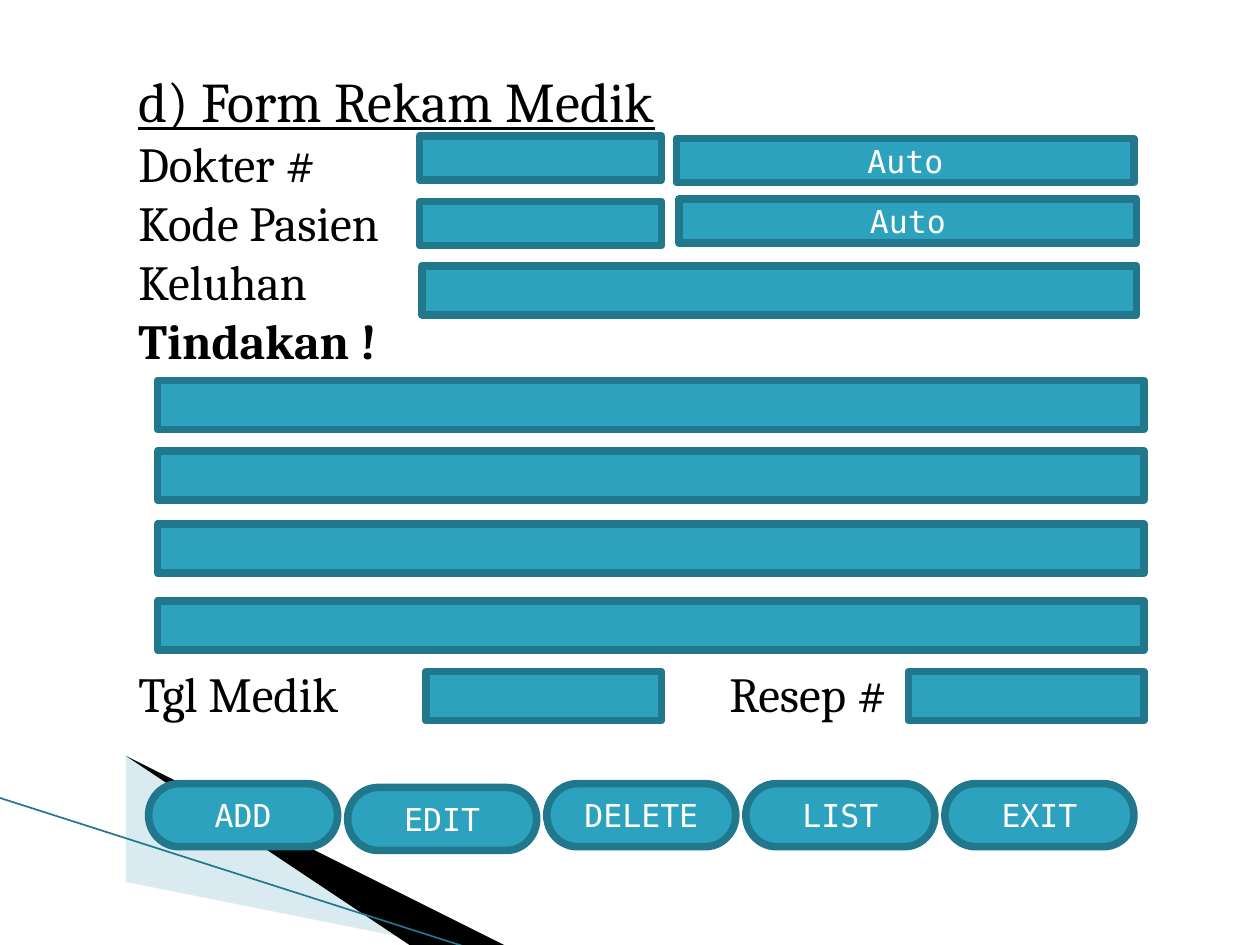
"""Build the medical record form slide."""
from lxml import etree
from pptx import Presentation
from pptx.dml.color import RGBColor
from pptx.enum import shapes, text
from pptx.oxml import ns
from pptx.util import Inches, Pt

BLACK = RGBColor(0, 0, 0)
WHITE = RGBColor(255, 255, 255)
TEAL = RGBColor(0x2D, 0xA2, 0xBF)
EDGE = RGBColor(0x21, 0x78, 0x8D)
PALE = RGBColor(0xA0, 0xCB, 0xDC)
RECT = shapes.MSO_SHAPE.RECTANGLE
PILL = shapes.MSO_SHAPE.FLOWCHART_TERMINATOR

WEDGES = [
    (PALE, 40, [(0.55, 6.51), (5.95, 7.51), (4.56, 7.51), (0.55, 6.5)]),
    (BLACK, 100, [(0.53, 6.49), (4.57, 7.51), (3.72, 7.52), (0.54, 6.5)]),
]
LABELS = [
    ("d) Form Rekam Medik", 32, False, True, 0),
    ("Dokter #", 28, False, False, 0),
    ("Kode Pasien", 28, False, False, 0),
    ("Keluhan", 28, False, False, 0),
    ("Tindakan !", 28, True, False, 0),
    ("Tgl Medik\tResep #", 28, False, False, 168),
]
RESEP_TAB = 4.69
FIELDS = [
    (3.33, 1.08, 1.92, 0.35, ""),
    (5.37, 1.1, 3.63, 0.35, "Auto"),
    (3.33, 1.6, 1.92, 0.35, ""),
    (5.39, 1.58, 3.63, 0.35, "Auto"),
    (3.35, 2.11, 5.67, 0.39, ""),
    (3.38, 5.33, 1.87, 0.39, ""),
    (7.21, 5.33, 1.87, 0.39, ""),
]
ACTION_TOPS = [3.02, 3.58, 4.16, 4.77]
BUTTONS = [("ADD", 6.22), ("EDIT", 6.25), ("DELETE", 6.22), ("LIST", 6.22), ("EXIT", 6.22)]
BUTTON_LEFT, BUTTON_STEP = 1.18, 1.58


def add_wedge(page, color, opacity, points):
    builder = page.shapes.build_freeform(*points[0], scale=Inches(1))
    builder.add_line_segments(points[1:])
    wedge = builder.convert_to_shape()
    wedge.shadow.inherit = False
    wedge.line.fill.background()
    wedge.fill.solid()
    wedge.fill.fore_color.rgb = color
    if opacity < 100:
        tint = wedge.fill._xPr.find(".//" + ns.qn("a:srgbClr"))
        etree.SubElement(tint, ns.qn("a:alpha"), val=str(opacity * 1000))


def add_edge_line(page):
    line = page.shapes.add_connector(
        shapes.MSO_CONNECTOR.STRAIGHT,
        Inches(-0.01), Inches(6.33), Inches(3.71), Inches(7.52))
    line.line.color.rgb = EDGE
    line.line.width = Pt(0.95)
    etree.SubElement(line._element.spPr, ns.qn("a:effectLst"))


def add_labels(page):
    box = page.shapes.add_textbox(Inches(1), Inches(0.48), Inches(8.5), Inches(6.43))
    frame = box.text_frame
    frame.word_wrap = True
    for index, (words, size, bold, underline, gap) in enumerate(LABELS):
        para = frame.paragraphs[0] if index == 0 else frame.add_paragraph()
        para.text = words
        if gap:
            para.space_before = Pt(gap)
        if "\t" in words:
            tabs = etree.SubElement(para._p.get_or_add_pPr(), ns.qn("a:tabLst"))
            etree.SubElement(tabs, ns.qn("a:tab"), pos=str(Inches(RESEP_TAB)), algn="l")
        font = para.font
        font.name, font.size = "Cambria", Pt(size)
        font.bold, font.underline = bold, underline
        font.color.rgb = BLACK


def add_control(page, kind, left, top, width, height, words=""):
    control = page.shapes.add_shape(
        kind, Inches(left), Inches(top), Inches(width), Inches(height))
    control.shadow.inherit = False
    control.fill.solid()
    control.fill.fore_color.rgb = TEAL
    control.line.color.rgb = EDGE
    control.line.width = Pt(4.33)
    if words:
        frame = control.text_frame
        frame.vertical_anchor = text.MSO_ANCHOR.MIDDLE
        para = frame.paragraphs[0]
        para.text = words
        para.alignment = text.PP_ALIGN.CENTER
        para.font.name, para.font.size = "DejaVu Sans Mono", Pt(18)
        para.font.color.rgb = WHITE


def main():
    deck = Presentation()
    deck.slide_width, deck.slide_height = Inches(10), Inches(7.5)
    page = deck.slides.add_slide(deck.slide_layouts[6])
    for wedge in WEDGES:
        add_wedge(page, *wedge)
    add_edge_line(page)
    add_labels(page)
    for field in FIELDS:
        add_control(page, RECT, *field)
    for top in ACTION_TOPS:
        add_control(page, RECT, 1.25, top, 7.83, 0.39)
    for index, (words, top) in enumerate(BUTTONS):
        add_control(page, PILL, BUTTON_LEFT + index * BUTTON_STEP, top, 1.5, 0.5, words)
    deck.save("out.pptx")


if __name__ == "__main__":
    main()
